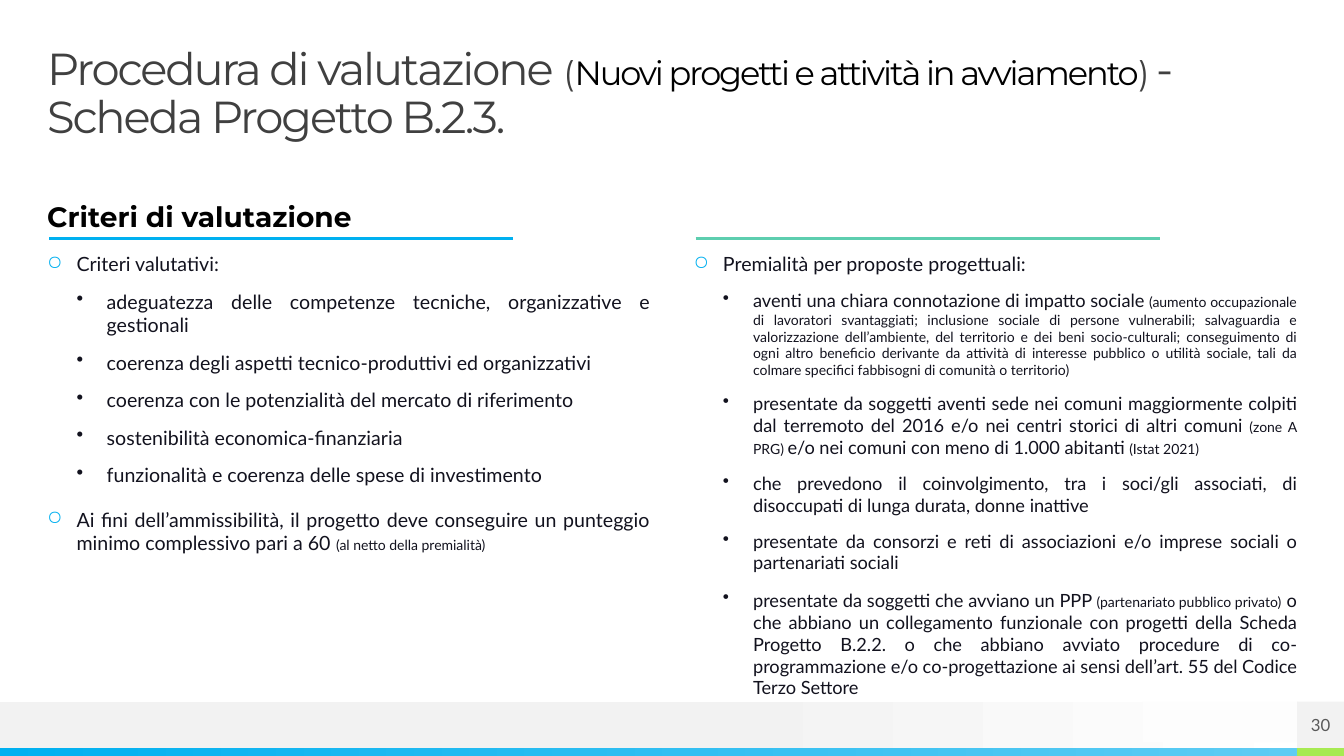
from lxml.etree import SubElement
from pptx import Presentation
from pptx.dml.color import RGBColor
from pptx.enum.shapes import MSO_CONNECTOR, MSO_SHAPE
from pptx.enum.text import MSO_ANCHOR, MSO_AUTO_SIZE, PP_ALIGN
from pptx.oxml.ns import qn
from pptx.util import Cm, Pt

BLACK = RGBColor(0x00, 0x00, 0x00)
WHITE = RGBColor(0xFF, 0xFF, 0xFF)
INK = RGBColor(0x12, 0x12, 0x1E)
TITLE_GREY = RGBColor(0x40, 0x40, 0x40)
NUMBER_GREY = RGBColor(0x59, 0x59, 0x59)
PALE_GREY = RGBColor(0xF2, 0xF2, 0xF2)
NEAR_WHITE = RGBColor(0xFD, 0xFD, 0xFD)
BLUE = RGBColor(0x00, 0xB0, 0xF0)
SKY = RGBColor(0x5E, 0xCC, 0xF3)
TEAL = RGBColor(0x5D, 0xCE, 0xAF)
LIME = RGBColor(0xA7, 0xEA, 0x52)

HEAD_FONT, BODY_FONT = "Montserrat", "Lato"
SLIDE_WIDTH, SLIDE_HEIGHT = 33.87, 19.05
LEFT, RIGHT = 1.19, 17.48
COLUMN_WIDTH = 15.2
BODY_TOP = 6.35
BAR_TOP, STRIP_TOP = 17.68, 18.85
NUMBER_LEFT = 32.69

TITLE = [
    ("Procedura di valutazione ", 32, TITLE_GREY),
    ("(", 24, TITLE_GREY),
    ("Nuovi progetti e attività in avviamento", 24, BLACK),
    (") ", 24, TITLE_GREY),
    ("- Scheda Progetto B.2.3.", 32, TITLE_GREY),
]

# Each paragraph: level, then runs of (text, size)
CRITERIA = [
    (0, [("Criteri valutativi:", 14)]),
    (1, [("adeguatezza delle competenze tecniche, organizzative e gestionali", 14)]),
    (1, [("coerenza degli aspetti tecnico-produttivi ed organizzativi", 14)]),
    (1, [("coerenza con le potenzialità del mercato di riferimento", 14)]),
    (1, [("sostenibilità economica-finanziaria", 14)]),
    (1, [("funzionalità e coerenza delle spese di investimento", 14)]),
    (0, [("Ai fini dell’ammissibilità, il progetto deve conseguire un punteggio "
          "minimo complessivo pari a 60 ", 14),
         ("(al netto della premialità)", 10)]),
]
BONUSES = [
    (0, [("Premialità per proposte progettuali:", 14)]),
    (1, [("aventi una chiara connotazione di impatto sociale ", 13),
         ("(aumento occupazionale di lavoratori svantaggiati; inclusione sociale di "
          "persone vulnerabili; salvaguardia e valorizzazione dell’ambiente, del "
          "territorio e dei beni socio-culturali; conseguimento di ogni altro beneficio "
          "derivante da attività di interesse pubblico o utilità sociale, tali da "
          "colmare specifici fabbisogni di comunità o territorio)", 10)]),
    (1, [("presentate da soggetti aventi sede nei comuni maggiormente colpiti dal "
          "terremoto del 2016 e/o nei centri storici di altri comuni ", 13),
         ("(zone A PRG) ", 10),
         ("e/o nei comuni con meno di 1.000 abitanti ", 13),
         ("(Istat 2021)", 10)]),
    (1, [("che prevedono il coinvolgimento, tra i soci/gli associati, di disoccupati "
          "di lunga durata, donne inattive", 13)]),
    (1, [("presentate da consorzi e reti di associazioni e/o imprese sociali o "
          "partenariati sociali", 13)]),
    (1, [("presentate da soggetti che avviano un PPP ", 13),
         ("(partenariato pubblico privato)", 10),
         (" ", 14),
         ("o che abbiano un collegamento funzionale con progetti della Scheda Progetto "
          "B.2.2. o che abbiano avviato procedure di co-programmazione e/o "
          "co-progettazione ai sensi dell’art. 55 del Codice Terzo Settore", 13)]),
]


class SlideBuilder:
    def __init__(self, slide):
        self.slide = slide

    def frame(self, shape, anchor=MSO_ANCHOR.TOP):
        """Prepare a text frame without margins and return it."""
        frame = shape.text_frame
        frame.word_wrap = True
        frame.auto_size = MSO_AUTO_SIZE.NONE
        frame.vertical_anchor = anchor
        frame.margin_left = frame.margin_right = 0
        frame.margin_top = frame.margin_bottom = 0
        return frame

    def span(self, para, text, size, color=INK, font=BODY_FONT, bold=False):
        span = para.add_run()
        span.text = text
        span.font.size = Pt(size)
        span.font.name = font
        span.font.bold = bold
        span.font.color.rgb = color
        return span

    def title(self, runs, left, top, width, height):
        box = self.slide.shapes.title
        box.left, box.top, box.width, box.height = map(Cm, (left, top, width, height))
        para = self.frame(box).paragraphs[0]
        para.alignment = PP_ALIGN.LEFT
        para.line_spacing = 0.9
        for text, size, color in runs:
            span = self.span(para, text, size, color, HEAD_FONT)
            span.font._element.set("spc", "-150")

    def heading(self, text, left, top, width, height):
        box = self.slide.shapes.add_textbox(*map(Cm, (left, top, width, height)))
        para = self.frame(box, MSO_ANCHOR.BOTTOM).paragraphs[0]
        para.space_before, para.space_after = Pt(10), Pt(5)
        self.span(para, text, 20, BLACK, HEAD_FONT, True)

    def bullet(self, para, level):
        props = para._p.get_or_add_pPr()
        indent, hanging = ((0.74, 0.74), (1.5, 0.76))[level]
        props.set("marL", str(Cm(indent)))
        props.set("indent", str(-Cm(hanging)))
        if level == 0:
            color = SubElement(props, qn("a:buClr"))
            SubElement(color, qn("a:srgbClr")).set("val", str(BLUE))
        SubElement(props, qn("a:buChar")).set("char", "○•"[level])

    def bullet_list(self, items, left, top, width, height):
        box = self.slide.shapes.add_textbox(*map(Cm, (left, top, width, height)))
        frame = self.frame(box)
        for index, (level, runs) in enumerate(items):
            para = frame.add_paragraph() if index else frame.paragraphs[0]
            para.level = level
            para.alignment = PP_ALIGN.JUSTIFY
            para.space_before, para.space_after = Pt((10, 5)[level]), Pt(5)
            self.bullet(para, level)
            for text, size in runs:
                self.span(para, text, size)

    def block(self, left, top, width, height, color, fade_to=None, fade_start=0):
        """Add a borderless rectangle, fading to a second colour if one is given."""
        shape = self.slide.shapes.add_shape(
            MSO_SHAPE.RECTANGLE, *map(Cm, (left, top, width, height)))
        shape.shadow.inherit = False
        shape.line.fill.background()
        if fade_to is None:
            shape.fill.solid()
            shape.fill.fore_color.rgb = color
            return shape
        shape.fill.gradient()
        shape.fill.gradient_angle = 0
        first, last = shape.fill.gradient_stops
        first.color.rgb, first.position = color, fade_start
        last.color.rgb, last.position = fade_to, 1
        return shape

    def page_number(self, text, left, top, width, height):
        shape = self.block(left, top, width, height, PALE_GREY)
        para = self.frame(shape, MSO_ANCHOR.MIDDLE).paragraphs[0]
        para.alignment = PP_ALIGN.CENTER
        self.span(para, text, 12, NUMBER_GREY)

    def rule(self, left, top, width, color):
        line = self.slide.shapes.add_connector(
            MSO_CONNECTOR.STRAIGHT, *map(Cm, (left, top, left + width, top)))
        line.line.color.rgb = color
        line.line.width = Pt(2.25)
        SubElement(line._element.spPr, qn("a:effectLst"))


def main():
    deck = Presentation()
    deck.slide_width, deck.slide_height = Cm(SLIDE_WIDTH), Cm(SLIDE_HEIGHT)
    page = SlideBuilder(deck.slides.add_slide(deck.slide_layouts[5]))

    number_width = SLIDE_WIDTH - NUMBER_LEFT
    page.block(0, BAR_TOP, SLIDE_WIDTH, 1.17, PALE_GREY, WHITE, 0.53)
    page.block(0, STRIP_TOP, NUMBER_LEFT, 0.2, BLUE, SKY)
    page.block(NUMBER_LEFT, STRIP_TOP, number_width, 0.2, LIME)

    page.title(TITLE, LEFT, 1.17, 31.5, 1.19)
    page.heading("Criteri di valutazione", LEFT, 4.6, COLUMN_WIDTH, 1.27)
    for left, color, items in ((LEFT, BLUE, CRITERIA), (RIGHT, TEAL, BONUSES)):
        page.rule(left + 0.05, 6, 11.7, color)
        page.bullet_list(items, left, BODY_TOP, COLUMN_WIDTH, SLIDE_HEIGHT - BODY_TOP)

    page.block(28.8, BAR_TOP, 3.89, 1.02, NEAR_WHITE)
    page.page_number("30", NUMBER_LEFT, BAR_TOP, number_width, 1.17)
    deck.save("out.pptx")


if __name__ == "__main__":
    main()
